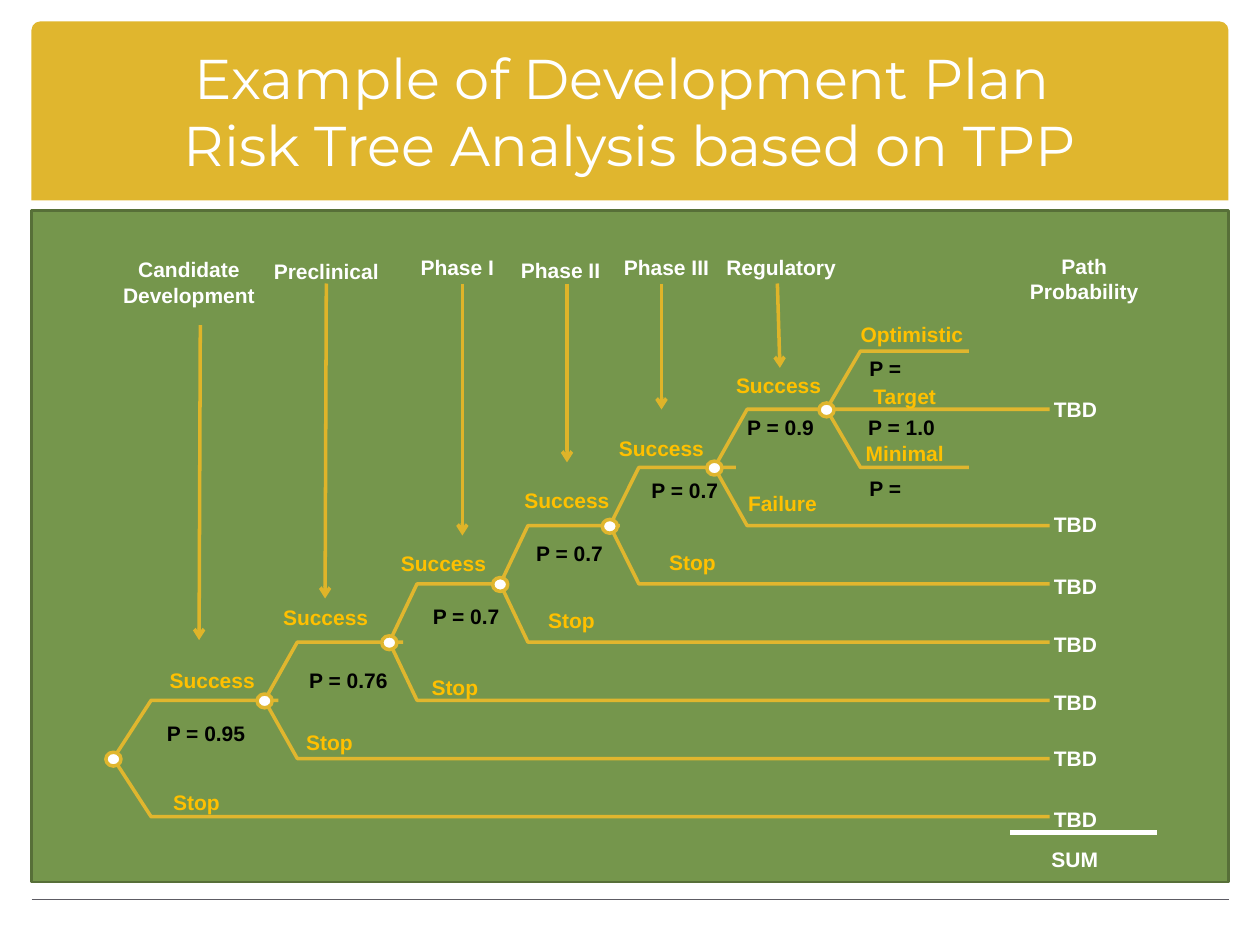
from lxml import etree
from pptx import Presentation
from pptx import util as u
from pptx.dml.color import RGBColor
from pptx.enum import shapes, text
from pptx.oxml.ns import qn

GOLD, AMBER, ARROW = "E0B62E", "FFC000", "DFB429"
WHITE, BLACK = "FFFFFF", "000000"
BASE_Y, STEP_Y, PATH_END = 6.02, 0.462, 8.33


def color(value):
    return RGBColor.from_string(value)


class SlideBuilder:
    def __init__(self, page, font="Arial", size=12):
        self.page = page
        self.font = font
        self.size = size

    def title(self, wording, left, top, width, height):
        title = self.page.shapes.title
        title.left, title.top = u.Inches(left), u.Inches(top)
        title.width, title.height = u.Inches(width), u.Inches(height)
        title.element.getparent().append(title.element)
        frame = title.text_frame
        frame.text = wording
        frame.auto_size = text.MSO_AUTO_SIZE.NONE
        frame.vertical_anchor = text.MSO_ANCHOR.MIDDLE
        para = frame.paragraphs[0]
        para.alignment = text.PP_ALIGN.CENTER
        for span in para.runs:
            span.font.name = "Montserrat"
            span.font.size = u.Pt(32)
            span.font.color.rgb = color(WHITE)

    def shape(self, kind, left, top, width, height, fill, line=None, weight=1):
        shape = self.page.shapes.add_shape(
            kind, u.Inches(left), u.Inches(top), u.Inches(width), u.Inches(height))
        shape.shadow.inherit = False
        shape.fill.solid()
        shape.fill.fore_color.rgb = color(fill)
        if line:
            shape.line.color.rgb = color(line)
            shape.line.width = u.Pt(weight)
        else:
            shape.line.fill.background()
        return shape

    def node(self, x, y):
        self.shape(shapes.MSO_SHAPE.OVAL, x - 0.06, y - 0.05, 0.12, 0.11, WHITE, GOLD, 2)

    def branch(self, points):
        start, *rest = [(u.Inches(x), u.Inches(y)) for x, y in points]
        builder = self.page.shapes.build_freeform(*start)
        builder.add_line_segments(rest, close=False)
        outline = builder.convert_to_shape()
        outline.shadow.inherit = False
        outline.fill.background()
        outline.line.color.rgb = color(GOLD)
        outline.line.width = u.Pt(2)

    def line(self, x1, y1, x2, y2, stroke, weight, arrow=False):
        line = self.page.shapes.add_connector(
            shapes.MSO_CONNECTOR.STRAIGHT,
            u.Inches(x1), u.Inches(y1), u.Inches(x2), u.Inches(y2))
        line.line.color.rgb = color(stroke)
        line.line.width = u.Pt(weight)
        if arrow:
            etree.SubElement(line.line._get_or_add_ln(), qn("a:tailEnd"), type="arrow")
        etree.SubElement(line.element.spPr, qn("a:effectLst"))

    def label(self, wording, left, top, width, ink, height=0.29, centered=True):
        box = self.page.shapes.add_textbox(
            u.Inches(left), u.Inches(top), u.Inches(width), u.Inches(height))
        frame = box.text_frame
        frame.word_wrap = True
        frame.auto_size = text.MSO_AUTO_SIZE.SHAPE_TO_FIT_TEXT
        frame.margin_left = frame.margin_right = u.Inches(0.04)
        frame.margin_top = frame.margin_bottom = u.Inches(0.05 if height == 0.3 else 0.04)
        frame.text = wording
        for para in frame.paragraphs:
            para.alignment = text.PP_ALIGN.CENTER if centered else text.PP_ALIGN.LEFT
            for span in para.runs:
                span.font.name = self.font
                span.font.size = u.Pt(self.size)
                span.font.bold = True
                span.font.color.rgb = color(ink)


def main():
    deck = Presentation()
    deck.slide_width, deck.slide_height = u.Inches(10), u.Inches(7.5)
    slide = SlideBuilder(deck.slides.add_slide(deck.slide_layouts[5]))

    header = slide.shape(shapes.MSO_SHAPE.ROUND_2_SAME_RECTANGLE, 0.25, 0.17, 9.5, 1.42, GOLD)
    header.adjustments[0] = 0.049
    slide.line(0.25, 7.14, 9.75, 7.14, "5D5C64", 1)
    slide.shape(shapes.MSO_SHAPE.RECTANGLE, 0.25, 1.67, 9.5, 5.33, "75964C", "576F38", 1.5)
    slide.title("Example of Development Plan \vRisk Tree Analysis based on TPP", 0.5, 0.25, 9, 1.25)

    branches = [
        (0.9, 1.2, 2.21, PATH_END), (2.1, 2.36, 3.2, PATH_END),
        (3.09, 3.31, 4.01, PATH_END), (3.97, 4.19, 4.92, PATH_END),
        (4.84, 5.07, 5.84, PATH_END), (5.67, 5.93, PATH_END, PATH_END),
        (6.56, 6.83, 7.69, 7.69),
    ]
    for level, (x, shoulder, upper_end, lower_end) in enumerate(branches):
        y = BASE_Y - level * STEP_Y
        slide.branch([(upper_end, y - STEP_Y), (shoulder, y - STEP_Y), (x, y),
                      (shoulder, y + STEP_Y), (lower_end, y + STEP_Y)])
    for level, (x, *_) in enumerate(branches):
        slide.node(x, BASE_Y - level * STEP_Y)

    for wording, left, top, width, height in [
        ("Candidate\nDevelopment", 0.87, 2, 1.26, 0.5),
        ("Preclinical", 2.07, 2, 1.04, 0.3),
        ("Phase I", 3, 1.98, 1.26, 0.29),
        ("Phase II", 3.83, 2, 1.24, 0.29),
        ("Phase III", 4.67, 1.98, 1.24, 0.29),
        ("Regulatory", 5.67, 1.98, 1.06, 0.29),
        ("Path\nProbability", 8.02, 1.97, 1.17, 0.49),
        ("SUM", 8.24, 6.67, 0.58, 0.3),
    ]:
        slide.label(wording, left, top, width, WHITE, height)

    for left, top, width, height in [
        (1.17, 5.25, 1.03, 0.3), (2, 4.75, 1.17, 0.3), (3.08, 4.33, 0.88, 0.29),
        (4, 3.83, 1, 0.29), (4.75, 3.42, 1, 0.29), (5.8, 2.92, 0.76, 0.29),
    ]:
        slide.label("Success", left, top, width, AMBER, height)

    for left, top, width, height in [
        (1.2, 6.22, 0.72, 0.3), (2.31, 5.75, 0.61, 0.29), (3.3, 5.31, 0.62, 0.29),
        (4.15, 4.78, 0.77, 0.29), (4.99, 4.31, 1.01, 0.3),
    ]:
        slide.label("Stop", left, top, width, AMBER, height)

    slide.label("Failure", 5.89, 3.85, 0.64, AMBER)
    slide.label("Optimistic", 6.79, 2.51, 0.96, AMBER, centered=False)
    slide.label("Target", 6.67, 3, 1.02, AMBER)
    slide.label("Minimal", 6.67, 3.46, 1.02, AMBER)

    for chance, left, top, width, height in [
        ("0.95", 1.08, 5.67, 1.11, 0.3), ("0.76", 2.17, 5.25, 1.19, 0.3),
        ("0.7", 3.25, 4.75, 0.9, 0.29), ("0.7", 4.08, 4.25, 0.88, 0.29),
        ("0.7", 4.92, 3.75, 1.03, 0.29), ("0.9", 5.87, 3.25, 0.65, 0.25),
    ]:
        slide.label(f"P = {chance}", left, top, width, BLACK, height)
    for wording, left, top, width in [
        ("P =", 6.86, 2.78, 0.4), ("P = 1.0", 6.85, 3.25, 0.65), ("P =", 6.86, 3.73, 0.4),
    ]:
        slide.label(wording, left, top, width, BLACK, 0.25, centered=False)

    for top in (3.1, 4.01, 4.5, 4.96, 5.42, 5.87, 6.35):
        slide.label("TBD", 8.26, top, 0.55, WHITE, 0.3)
    slide.line(8.02, 6.61, 9.18, 6.61, WHITE, 3)

    for x1, y1, x2, y2 in [
        (1.59, 2.58, 1.58, 5.08), (2.59, 2.25, 2.58, 4.75), (3.67, 2.25, 3.67, 4.25),
        (4.5, 2.25, 4.5, 3.67), (5.25, 2.25, 5.25, 3.25), (6.17, 2.25, 6.19, 2.92),
    ]:
        slide.line(x1, y1, x2, y2, ARROW, 2, arrow=True)

    deck.save("out.pptx")


if __name__ == "__main__":
    main()
